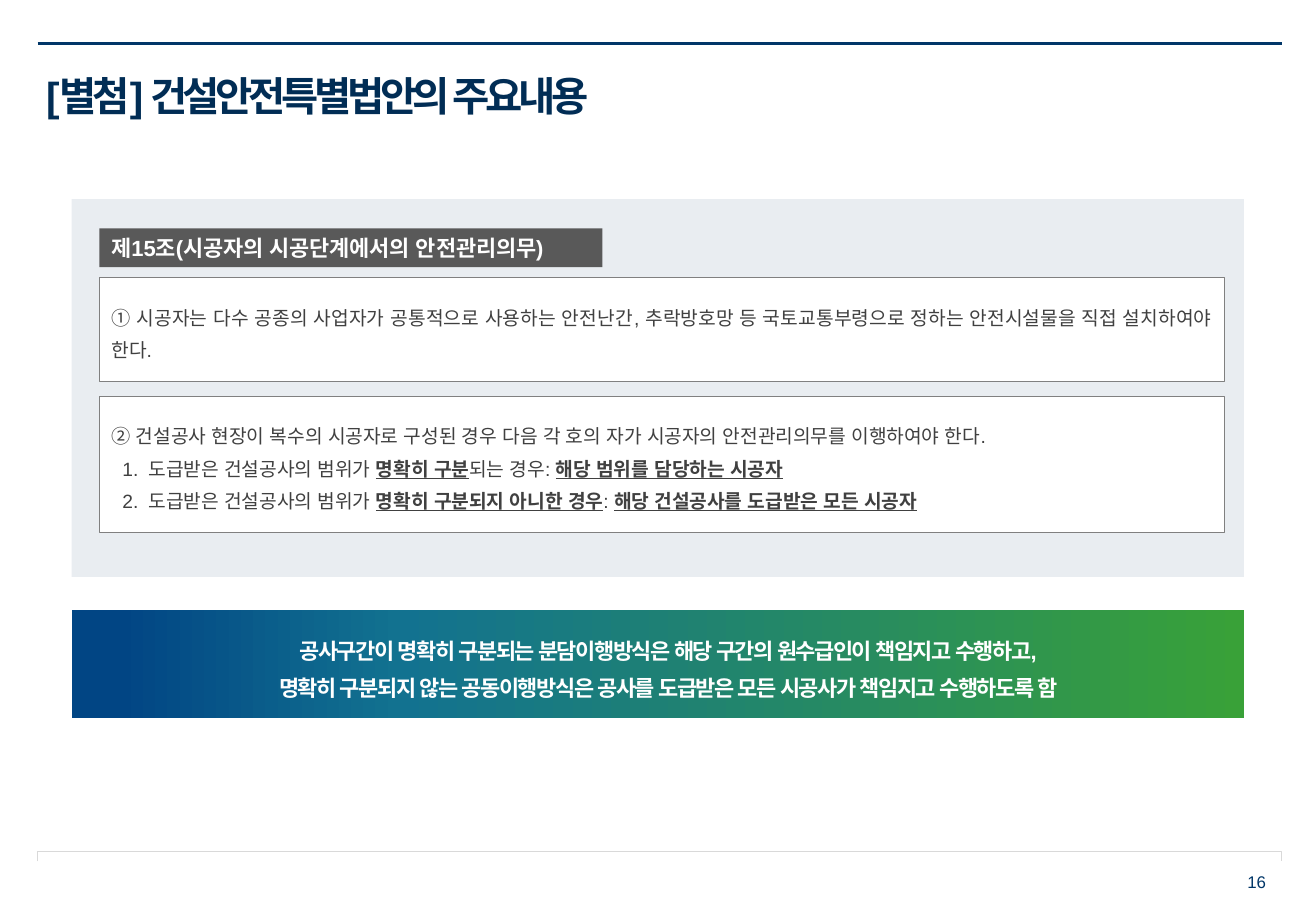
from lxml import etree
from pptx import Presentation
from pptx.dml.color import RGBColor
from pptx.enum.shapes import MSO_CONNECTOR, MSO_SHAPE
from pptx.enum.text import MSO_ANCHOR, PP_ALIGN
from pptx.oxml.ns import qn
from pptx.util import Pt

FONT = "Arial"
NAVY, WHITE, INK = "013668", "FFFFFF", "404040"
PANEL_LEFT, PANEL_WIDTH = 42.5, 694.8
CARD_LEFT, CARD_WIDTH = 59, 666.7
RULE_LEFT, RULE_RIGHT = 22.3, 759.6


def color(code):
    return RGBColor.from_string(code)


def add_run(paragraph, text, size, code, bold=False, underline=False, spacing=0):
    run = paragraph.add_run()
    run.text = text
    font = run.font
    font.name, font.size, font.bold, font.underline = FONT, Pt(size), bold, underline
    font.color.rgb = color(code)
    properties = run._r.get_or_add_rPr()
    etree.SubElement(properties, qn("a:ea"), typeface=FONT)
    if spacing:
        properties.set("spc", str(round(spacing * 100)))


def set_frame(frame, anchor, insets=(7.2, 3.6, 7.2, 3.6)):
    frame.word_wrap = True
    frame.vertical_anchor = anchor
    frame.margin_left, frame.margin_top, frame.margin_right, frame.margin_bottom = map(Pt, insets)


def set_indent(paragraph, left, first):
    properties = paragraph._p.get_or_add_pPr()
    properties.set("marL", str(Pt(left)))
    properties.set("indent", str(Pt(first)))
    return properties


def add_box(slide, left, top, width, height, fill=None, border=None):
    box = slide.shapes.add_shape(MSO_SHAPE.RECTANGLE, Pt(left), Pt(top), Pt(width), Pt(height))
    box.shadow.inherit = False
    if fill:
        box.fill.solid()
        box.fill.fore_color.rgb = color(fill)
    if border:
        box.line.color.rgb = color(border)
        box.line.width = Pt(0.25)
    else:
        box.line.fill.background()
    return box


def add_card(slide, top, height, paragraphs):
    card = add_box(slide, CARD_LEFT, top, CARD_WIDTH, height, WHITE, "808080")
    frame = card.text_frame
    set_frame(frame, MSO_ANCHOR.TOP, (7.2, 11.5, 7.2, 11.5))
    for index, (numbered, parts) in enumerate(paragraphs):
        paragraph = frame.add_paragraph() if index else frame.paragraphs[0]
        paragraph.alignment = PP_ALIGN.JUSTIFY
        paragraph.line_spacing = 1.4
        if numbered:
            properties = set_indent(paragraph, 22, -15.5)
            etree.SubElement(properties, qn("a:buFont"), typeface=FONT)
            etree.SubElement(properties, qn("a:buAutoNum"), type="arabicPeriod")
        for text, stressed in parts:
            add_run(paragraph, text, 11.4, INK, stressed, stressed)


def set_gradient(shape, stops):
    shape.fill.gradient()
    shape.fill.gradient_angle = 0
    stop_list = shape._element.spPr.find(qn("a:gradFill")).find(qn("a:gsLst"))
    for old in list(stop_list):
        stop_list.remove(old)
    for percent, code in stops:
        stop = etree.SubElement(stop_list, qn("a:gs"), pos=str(percent * 1000))
        etree.SubElement(stop, qn("a:srgbClr"), val=code)


def add_banner(slide, lines):
    banner = add_box(slide, PANEL_LEFT, 361.4, PANEL_WIDTH, 64.1)
    set_gradient(banner, [(4, "014584"), (28, "127290"), (100, "39A138")])
    set_frame(banner.text_frame, MSO_ANCHOR.MIDDLE, (2.2, 2.9, 5.8, 2.9))
    paragraph = banner.text_frame.paragraphs[0]
    paragraph.alignment = PP_ALIGN.CENTER
    paragraph.line_spacing = 1.4
    paragraph.space_after = Pt(3.2)
    set_indent(paragraph, 15.8, 0)
    for index, line in enumerate(lines):
        if index:
            paragraph.add_line_break()
        add_run(paragraph, line, 13, WHITE, bold=True, spacing=-0.8)


def add_rules(slide):
    top_rule = slide.shapes.add_connector(
        MSO_CONNECTOR.STRAIGHT, Pt(RULE_LEFT), Pt(25.9), Pt(RULE_RIGHT), Pt(25.9))
    top_rule.line.color.rgb = color(NAVY)
    top_rule.line.width = Pt(2)
    etree.SubElement(top_rule._element.spPr, qn("a:effectLst"))

    builder = slide.shapes.build_freeform(Pt(RULE_LEFT), Pt(510.5))
    corners = [(RULE_LEFT, 504.7), (RULE_RIGHT, 504.7), (RULE_RIGHT, 510.5)]
    builder.add_line_segments([(Pt(x), Pt(y)) for x, y in corners], close=False)
    footer_rule = builder.convert_to_shape()
    footer_rule.shadow.inherit = False
    footer_rule.fill.background()
    footer_rule.line.color.rgb = color("D9D9D9")
    footer_rule.line.width = Pt(0.75)


def add_title(slide, text):
    title = slide.shapes.title
    title.left, title.top, title.width, title.height = Pt(20.2), Pt(31.7), Pt(739.4), Pt(46.8)
    set_frame(title.text_frame, MSO_ANCHOR.MIDDLE)
    paragraph = title.text_frame.paragraphs[0]
    paragraph.alignment = PP_ALIGN.LEFT
    paragraph.line_spacing = 1.09
    add_run(paragraph, text, 24, "012D55", bold=True, spacing=-2.6)


def add_article_heading(slide, text):
    heading = add_box(slide, CARD_LEFT, 135.4, 298.1, 23, "595959")
    set_frame(heading.text_frame, MSO_ANCHOR.TOP)
    paragraph = heading.text_frame.paragraphs[0]
    paragraph.alignment = PP_ALIGN.LEFT
    add_run(paragraph, text, 13, WHITE, bold=True)


def add_page_number(slide, number):
    page = slide.shapes.add_textbox(Pt(581.8), Pt(508.3), Pt(175.7), Pt(28.8))
    set_frame(page.text_frame, MSO_ANCHOR.MIDDLE)
    paragraph = page.text_frame.paragraphs[0]
    paragraph.alignment = PP_ALIGN.RIGHT
    add_run(paragraph, number, 10, NAVY)


def main():
    deck = Presentation()
    deck.slide_width, deck.slide_height = Pt(780), Pt(540)
    slide = deck.slides.add_slide(deck.slide_layouts[5])
    add_rules(slide)
    add_title(slide, "[별첨] 건설안전특별법안의 주요내용")
    add_box(slide, PANEL_LEFT, 118.1, PANEL_WIDTH, 223.9, "E9EDF1")
    add_article_heading(slide, "제15조(시공자의 시공단계에서의 안전관리의무)")
    add_card(slide, 164.6, 61.4, [
        (False, [("① 시공자는 다수 공종의 사업자가 공통적으로 사용하는 안전난간, 추락방호망 등 "
                  "국토교통부령으로 정하는 안전시설물을 직접 설치하여야 한다.", False)]),
    ])
    add_card(slide, 234.8, 80.6, [
        (False, [("② 건설공사 현장이 복수의 시공자로 구성된 경우 다음 각 호의 자가 "
                  "시공자의 안전관리의무를 이행하여야 한다.", False)]),
        (True, [("도급받은 건설공사의 범위가 ", False), ("명확히 구분", True),
                ("되는 경우: ", False), ("해당 범위를 담당하는 시공자", True)]),
        (True, [("도급받은 건설공사의 범위가 ", False), ("명확히 구분되지 아니한 경우", True),
                (": ", False), ("해당 건설공사를 도급받은 모든 시공자", True)]),
    ])
    add_banner(slide, [
        "공사구간이 명확히 구분되는 분담이행방식은 해당 구간의 원수급인이 책임지고 수행하고,",
        "명확히 구분되지 않는 공동이행방식은 공사를 도급받은 모든 시공사가 책임지고 수행하도록 함",
    ])
    add_page_number(slide, "16")
    deck.save("out.pptx")


if __name__ == "__main__":
    main()
